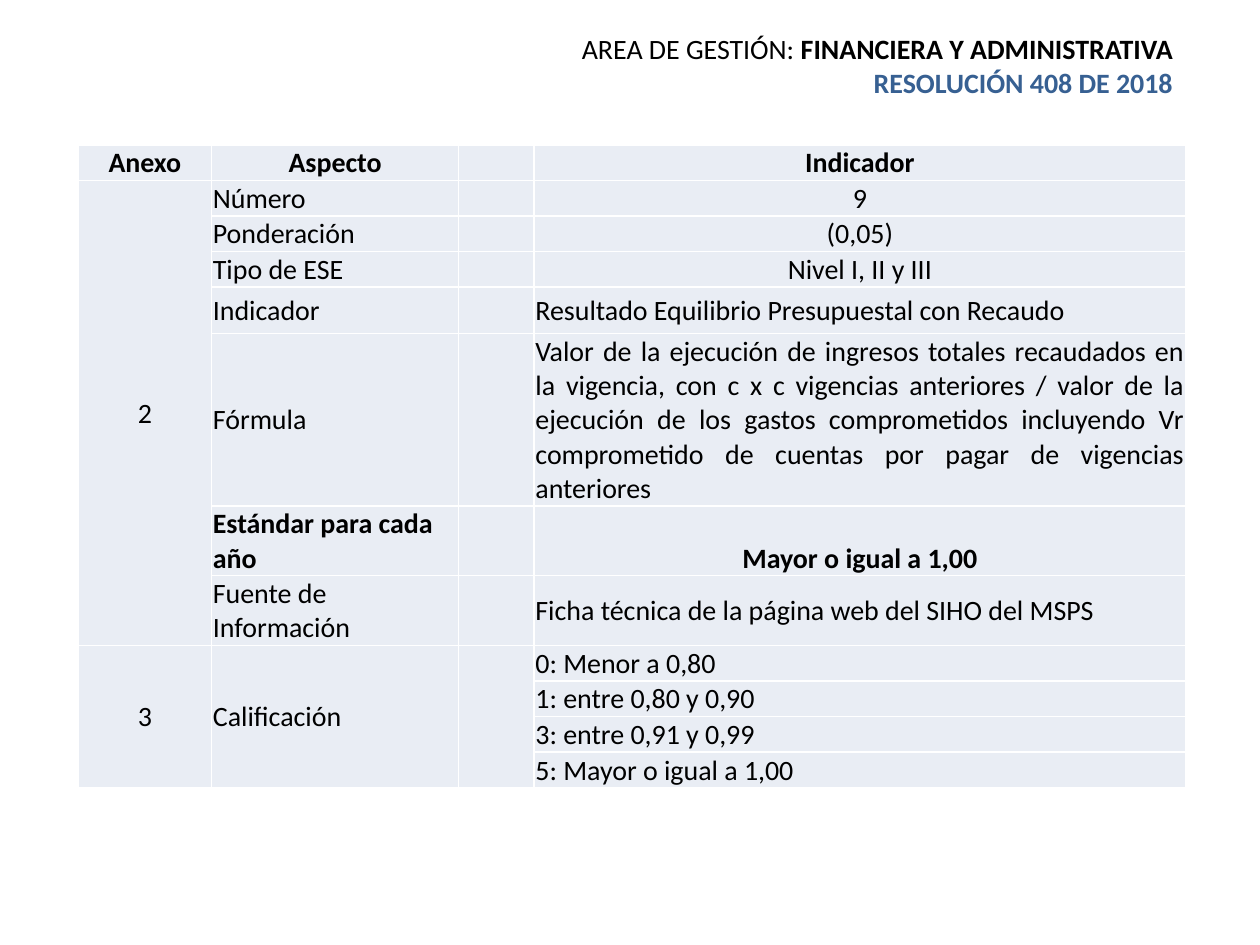
from lxml import etree
from pptx import Presentation
from pptx.dml.color import RGBColor
from pptx.enum.text import MSO_ANCHOR, MSO_AUTO_SIZE, PP_ALIGN
from pptx.oxml.ns import qn
from pptx.util import Inches, Pt

LEFT, CENTER, RIGHT, JUSTIFY = (
    PP_ALIGN.LEFT, PP_ALIGN.CENTER, PP_ALIGN.RIGHT, PP_ALIGN.JUSTIFY)
MIDDLE, BOTTOM = MSO_ANCHOR.MIDDLE, MSO_ANCHOR.BOTTOM
NO_AUTOFIT = MSO_AUTO_SIZE.NONE

FONT, SIZE = "Calibri", 16
BLACK, WHITE, BLUE, CELL_FILL = "000000", "FFFFFF", "376092", "E9EDF4"

COLUMN_WIDTHS = [1.06, 1.96, 0.6, 5.17]
LINE_HEIGHT = 0.26
FORMULA = (
    "Valor de la ejecución de ingresos totales recaudados en la vigencia, "
    "con c x c vigencias anteriores / valor de la ejecución de los gastos "
    "comprometidos incluyendo Vr comprometido de cuentas por pagar de "
    "vigencias anteriores")

# Row height, anchor, bold, indicator alignment, then annex, aspect, indicator
ROWS = [
    (LINE_HEIGHT, BOTTOM, True, CENTER, "Anexo", "Aspecto", "Indicador"),
    (LINE_HEIGHT, BOTTOM, False, CENTER, "2", "Número", "9"),
    (LINE_HEIGHT, BOTTOM, False, CENTER, "", "Ponderación", "(0,05)"),
    (LINE_HEIGHT, BOTTOM, False, CENTER, "", "Tipo de ESE", "Nivel I, II y III"),
    (0.37, MIDDLE, False, LEFT, "", "Indicador",
     "Resultado Equilibrio Presupuestal con Recaudo"),
    (1.19, MIDDLE, False, JUSTIFY, "", "Fórmula", FORMULA),
    (0.51, BOTTOM, True, CENTER, "", "Estándar para cada año",
     "Mayor o igual a 1,00"),
    (0.5, MIDDLE, False, LEFT, "", "Fuente de Información",
     "Ficha técnica de la página web del SIHO del MSPS"),
    (LINE_HEIGHT, MIDDLE, False, LEFT, "3", "Calificación", "0: Menor a 0,80"),
    (LINE_HEIGHT, MIDDLE, False, LEFT, "", "", "1: entre 0,80 y 0,90"),
    (LINE_HEIGHT, MIDDLE, False, LEFT, "", "", "3: entre 0,91 y 0,99"),
    (LINE_HEIGHT, MIDDLE, False, LEFT, "", "", "5: Mayor o igual a 1,00"),
]
# First row, last row, column
MERGES = [(1, 7, 0), (8, 11, 0), (8, 11, 1), (8, 11, 2)]


def color(value):
    return RGBColor.from_string(value)


def add_run(paragraph, text, bold=False, text_color=BLACK):
    run = paragraph.add_run()
    run.text = text
    run.font.name = FONT
    run.font.size = Pt(SIZE)
    run.font.bold = bold
    run.font.color.rgb = color(text_color)


def add_borders(cell):
    properties = cell._tc.get_or_add_tcPr()
    for side in ("a:lnL", "a:lnR", "a:lnT", "a:lnB"):
        line = etree.SubElement(properties, qn(side), w=str(Pt(1)))
        fill = etree.SubElement(line, qn("a:solidFill"))
        etree.SubElement(fill, qn("a:srgbClr"), val=WHITE)


def format_cell(cell, text, alignment, anchor, bold):
    add_borders(cell)
    cell.fill.solid()
    cell.fill.fore_color.rgb = color(CELL_FILL)
    cell.vertical_anchor = anchor
    cell.margin_left = cell.margin_right = cell.margin_top = Inches(0.01)
    cell.margin_bottom = 0
    paragraph = cell.text_frame.paragraphs[0]
    paragraph.alignment = alignment
    if text:
        add_run(paragraph, text, bold)
    else:
        # An empty cell keeps the text size, so that its row does not grow
        etree.SubElement(paragraph._p, qn("a:endParaRPr"), sz=str(SIZE * 100))


def add_indicator_table(slide):
    heights = [row[0] for row in ROWS]
    table = slide.shapes.add_table(
        len(ROWS), len(COLUMN_WIDTHS), Inches(0.62), Inches(1.15),
        Inches(sum(COLUMN_WIDTHS)), Inches(sum(heights))).table
    for column, width in zip(table.columns, COLUMN_WIDTHS):
        column.width = Inches(width)
    for index, row in enumerate(ROWS):
        height, anchor, bold, alignment, annex, aspect, indicator = row
        table.rows[index].height = Inches(height)
        aspect_alignment = CENTER if index == 0 else LEFT
        annex_anchor = BOTTOM if index == 0 else MIDDLE
        cells = [
            (annex, CENTER, annex_anchor),
            (aspect, aspect_alignment, anchor),
            ("", LEFT, anchor),
            (indicator, alignment, anchor),
        ]
        for column, (text, cell_alignment, cell_anchor) in enumerate(cells):
            format_cell(table.cell(index, column), text, cell_alignment,
                        cell_anchor, bold)
    for first, last, column in MERGES:
        table.cell(first, column).merge(table.cell(last, column))


def add_title(slide):
    title = slide.shapes.title
    title.left, title.top = Inches(0.51), Inches(0.25)
    title.width, title.height = Inches(8.9), Inches(0.54)
    frame = title.text_frame
    frame.auto_size = NO_AUTOFIT
    frame.word_wrap = True
    frame.vertical_anchor = MIDDLE
    area, resolution = frame.paragraphs[0], frame.add_paragraph()
    area.alignment = resolution.alignment = RIGHT
    add_run(area, "AREA DE GESTIÓN: ")
    add_run(area, "FINANCIERA Y ADMINISTRATIVA", bold=True)
    add_run(resolution, "RESOLUCIÓN 408 DE 2018", bold=True, text_color=BLUE)


def main():
    presentation = Presentation()
    presentation.slide_width = Inches(10)
    presentation.slide_height = Inches(7.5)
    # Title Only layout
    slide = presentation.slides.add_slide(presentation.slide_layouts[5])
    add_title(slide)
    add_indicator_table(slide)
    presentation.save("out.pptx")


if __name__ == "__main__":
    main()
